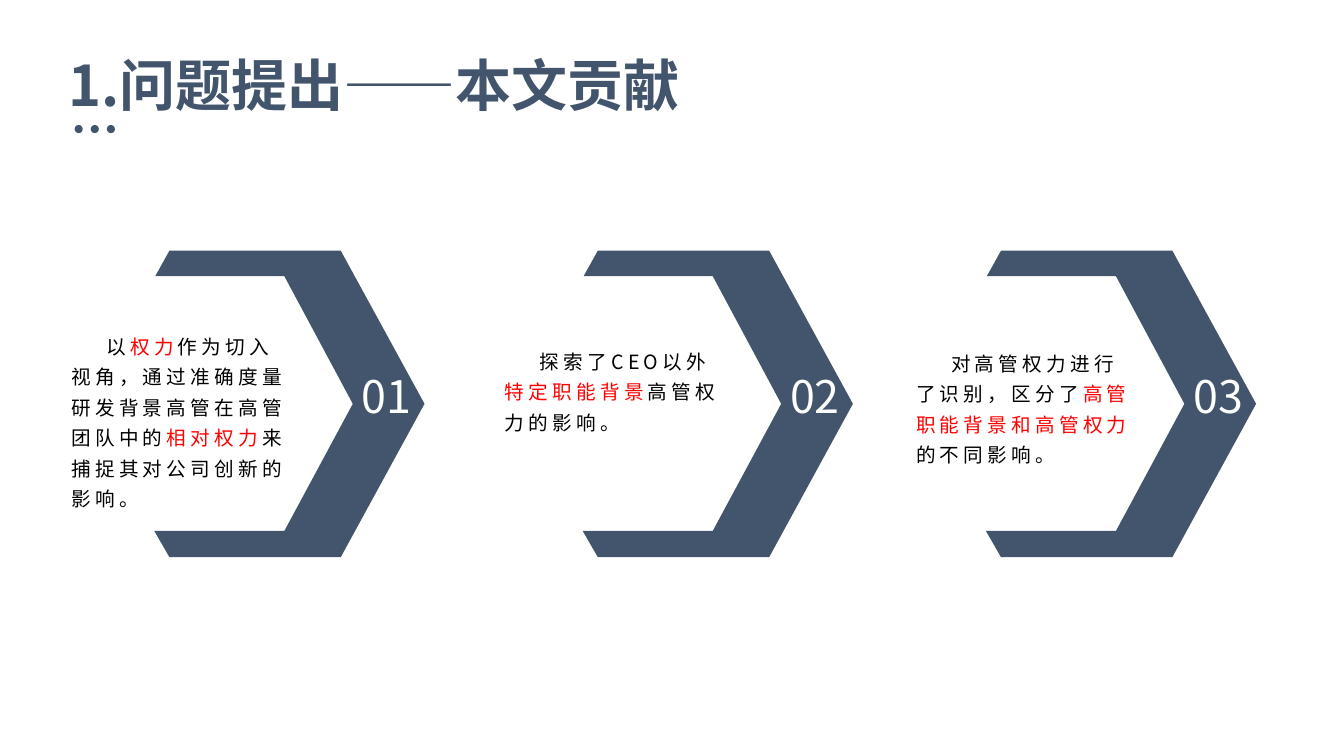
from lxml.etree import SubElement
from pptx import Presentation
from pptx.dml.color import RGBColor
from pptx.enum.shapes import MSO_SHAPE
from pptx.enum.text import MSO_AUTO_SIZE
from pptx.oxml.ns import qn
from pptx.util import Pt

FONT = "Noto Sans CJK SC"
COLORS = {"slate": "42556C", "number": "FEFEFE", "body": "000000", "key": "FF0000"}

TITLE = "1.问题提出——本文贡献"
CONTRIBUTIONS = [
    {"number": "01", "arrow_left": 110.2, "text_left": 43.9, "text_top": 230.4, "text_height": 137.5,
     "passages": [("以", "body"), ("权力", "key"),
                  ("作为切入视角，通过准确度量研发背景高管在高管团队中的", "body"),
                  ("相对权力", "key"), ("来捕捉其对公司创新的影响。", "body")]},
    {"number": "02", "arrow_left": 416.2, "text_left": 353.5, "text_top": 241.2, "text_height": 71.3,
     "passages": [("探索了CEO以外", "body"), ("特定职能背景", "key"),
                  ("高管权力的影响。", "body")]},
    {"number": "03", "arrow_left": 704.2, "text_left": 647.3, "text_top": 242.6, "text_height": 93.6,
     "passages": [("对高管权力进行了识别，区分了", "body"),
                  ("高管职能背景和高管权力", "key"), ("的不同影响。", "body")]},
]
ARROW_TOP = 179.1
ARROW_OUTLINE = [(10.8, 0), (133.2, 0), (193, 109.4), (133.2, 218.9), (10.8, 218.9),
                 (0, 200.2), (92.9, 200.2), (141.8, 109.4), (92.9, 18.2), (0.7, 18.2)]
NUMBER_OFFSET = 141.1
DOT_LEFT, DOT_TOP, DOT_SIZE, DOT_STEP = 53.3, 89.3, 5.8, 11.5


def rgb(color):
    return RGBColor.from_string(COLORS[color])


def paint(shape):
    shape.shadow.inherit = False
    shape.fill.solid()
    shape.fill.fore_color.rgb = rgb("slate")
    shape.line.fill.background()


def add_text(slide, box, passages, size, wrap=True, inset=True, bold=False, spacing=0):
    text_box = slide.shapes.add_textbox(*map(Pt, box))
    frame = text_box.text_frame
    frame.word_wrap = wrap
    frame.auto_size = MSO_AUTO_SIZE.SHAPE_TO_FIT_TEXT
    if not inset:
        frame.margin_left = frame.margin_right = frame.margin_top = frame.margin_bottom = 0
    paragraph = frame.paragraphs[0]
    paragraph.font.size = Pt(size)
    paragraph.font.bold = bold
    paragraph.font.name = FONT
    for wording, color in passages:
        run = paragraph.add_run()
        run.text = wording
        run.font.color.rgb = rgb(color)
        properties = run._r.get_or_add_rPr()
        SubElement(properties, qn("a:ea")).set("typeface", FONT)
        if spacing:
            properties.set("spc", str(spacing * 100))
    return paragraph


def add_contribution(slide, item):
    outline = [(Pt(item["arrow_left"] + x), Pt(ARROW_TOP + y)) for x, y in ARROW_OUTLINE]
    builder = slide.shapes.build_freeform(*outline[0], scale=1)
    builder.add_line_segments(outline[1:], close=True)
    paint(builder.convert_to_shape())

    number_box = (item["arrow_left"] + NUMBER_OFFSET, 259.9, 52.6, 46.1)
    add_text(slide, number_box, [(item["number"], "number")], 32, wrap=False)

    text_box = (item["text_left"], item["text_top"], 167.8, item["text_height"])
    paragraph = add_text(slide, text_box, item["passages"], 14, spacing=3)
    paragraph.line_spacing = 1.3
    paragraph._p.get_or_add_pPr().set("indent", str(Pt(25)))


def main():
    presentation = Presentation()
    presentation.slide_width, presentation.slide_height = Pt(960), Pt(540)
    slide = presentation.slides.add_slide(presentation.slide_layouts[6])

    add_text(slide, (49, 36, 838.8, 48.2), [(TITLE, "slate")], 40, inset=False, bold=True)
    dots = slide.shapes.add_group_shape()
    for position in range(3):
        paint(dots.shapes.add_shape(MSO_SHAPE.OVAL, Pt(DOT_LEFT + position * DOT_STEP),
                                    Pt(DOT_TOP), Pt(DOT_SIZE), Pt(DOT_SIZE)))
    for item in CONTRIBUTIONS:
        add_contribution(slide, item)
    presentation.save("out.pptx")


if __name__ == "__main__":
    main()
